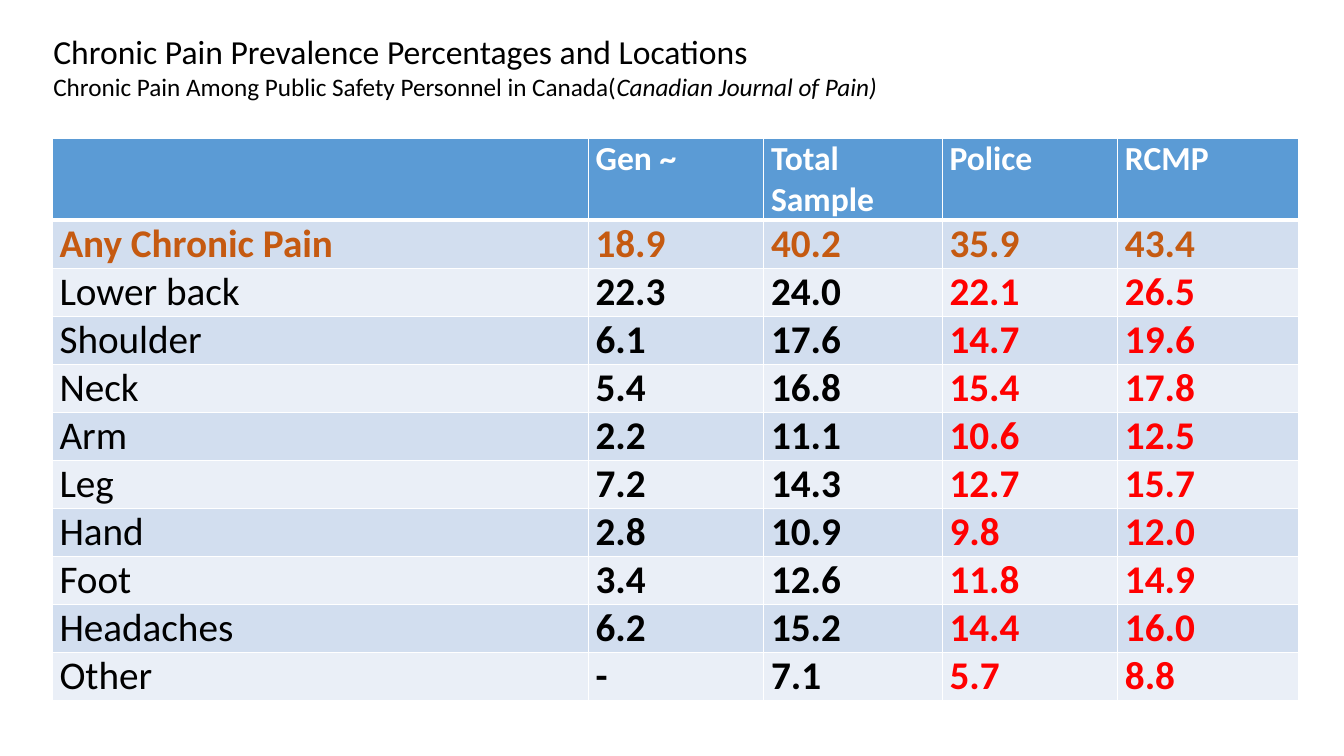
"""Build a slide with a table of chronic pain rates by body part and group."""
from lxml import etree
from pptx import Presentation
from pptx.dml.color import RGBColor
from pptx.enum.text import MSO_ANCHOR, MSO_AUTO_SIZE, PP_ALIGN
from pptx.oxml.ns import qn
from pptx.util import Cm, Pt

LEFT = PP_ALIGN.LEFT
TOP = MSO_ANCHOR.TOP
FIXED = MSO_AUTO_SIZE.NONE
FACE = "Calibri"
WHITE, BLACK, RED, RUST = "FFFFFF", "000000", "FF0000", "C55A11"
HEAD, BANDS = "5B9BD5", ("EAEFF7", "D2DEEF")


def style(font, shade, **looks):
    font.color.rgb = RGBColor.from_string(shade)
    for name, value in {"name": FACE, **looks}.items():
        setattr(font, name, value)


def edge(cell, sides):
    props = cell._tc.get_or_add_tcPr()
    for spot, (side, width) in enumerate(sides.items()):
        line = etree.Element(qn(f"a:ln{side}"), w=str(Pt(width)))
        fill = etree.SubElement(line, qn("a:solidFill"))
        etree.SubElement(fill, qn("a:srgbClr"), val=WHITE)
        props.insert(spot, line)


deck = Presentation()
deck.slide_width, deck.slide_height = Cm(33.87), Cm(19.05)
slide = deck.slides.add_slide(deck.slide_layouts[5])

title = slide.shapes.title
title.left, title.top, title.width, title.height = Cm(1.09), Cm(0.66), Cm(31.88), Cm(2.06)
frame = title.text_frame
for name, value in {"word_wrap": True, "auto_size": FIXED, "vertical_anchor": TOP}.items():
    setattr(frame, name, value)

lines = [
    [("Chronic Pain Prevalence Percentages and Locations", 24, False)],
    [("Chronic Pain Among Public Safety Personnel in Canada(", 18, False),
     ("Canadian Journal of Pain)", 18, True)],
]
for index, parts in enumerate(lines):
    para = frame.add_paragraph() if index else frame.paragraphs[0]
    para.alignment = LEFT
    for text, size, slant in parts:
        run = para.add_run()
        run.text = text
        style(run.font, BLACK, size=Pt(size), italic=slant)

rows = [
    ("", "Gen ~", "Total Sample", "Police", "RCMP"),
    ("Any Chronic Pain", "18.9", "40.2", "35.9", "43.4"),
    ("Lower back", "22.3", "24.0", "22.1", "26.5"),
    ("Shoulder", "6.1", "17.6", "14.7", "19.6"),
    ("Neck", "5.4", "16.8", "15.4", "17.8"),
    ("Arm", "2.2", "11.1", "10.6", "12.5"),
    ("Leg", "7.2", "14.3", "12.7", "15.7"),
    ("Hand", "2.8", "10.9", "9.8", "12.0"),
    ("Foot", "3.4", "12.6", "11.8", "14.9"),
    ("Headaches", "6.2", "15.2", "14.4", "16.0"),
    ("Other", "-", "7.1", "5.7", "8.8"),
]
widths = [13.51, 4.42, 4.5, 4.42, 4.55]
heights = [2.06] + [1.21] * (len(rows) - 1)
table = slide.shapes.add_table(len(rows), len(widths), Cm(1.32), Cm(3.48),
                               Cm(sum(widths)), Cm(sum(heights))).table
for column, width in zip(table.columns, widths):
    column.width = Cm(width)
for row, height in zip(table.rows, heights):
    row.height = Cm(height)

pads = {"margin_left": Cm(0.18), "margin_right": Cm(0.18), "margin_top": 0, "margin_bottom": 0}
for r, texts in enumerate(rows):
    for c, text in enumerate(texts):
        cell = table.cell(r, c)
        for name, value in pads.items():
            setattr(cell, name, value)
        cell.fill.solid()
        cell.fill.fore_color.rgb = RGBColor.from_string(BANDS[r % 2] if r else HEAD)
        edge(cell, {"L": 1, "R": 1, "T": 3 if r == 1 else 1, "B": 1 if r else 3})
        if r < 2:
            shade = RUST if r else WHITE
        else:
            shade = RED if c > 2 else BLACK
        para = cell.text_frame.paragraphs[0]
        para.text = text
        style(para.font, shade, size=Pt(28 if r else 24), bold=r < 2 or c > 0)

deck.save("out.pptx")
